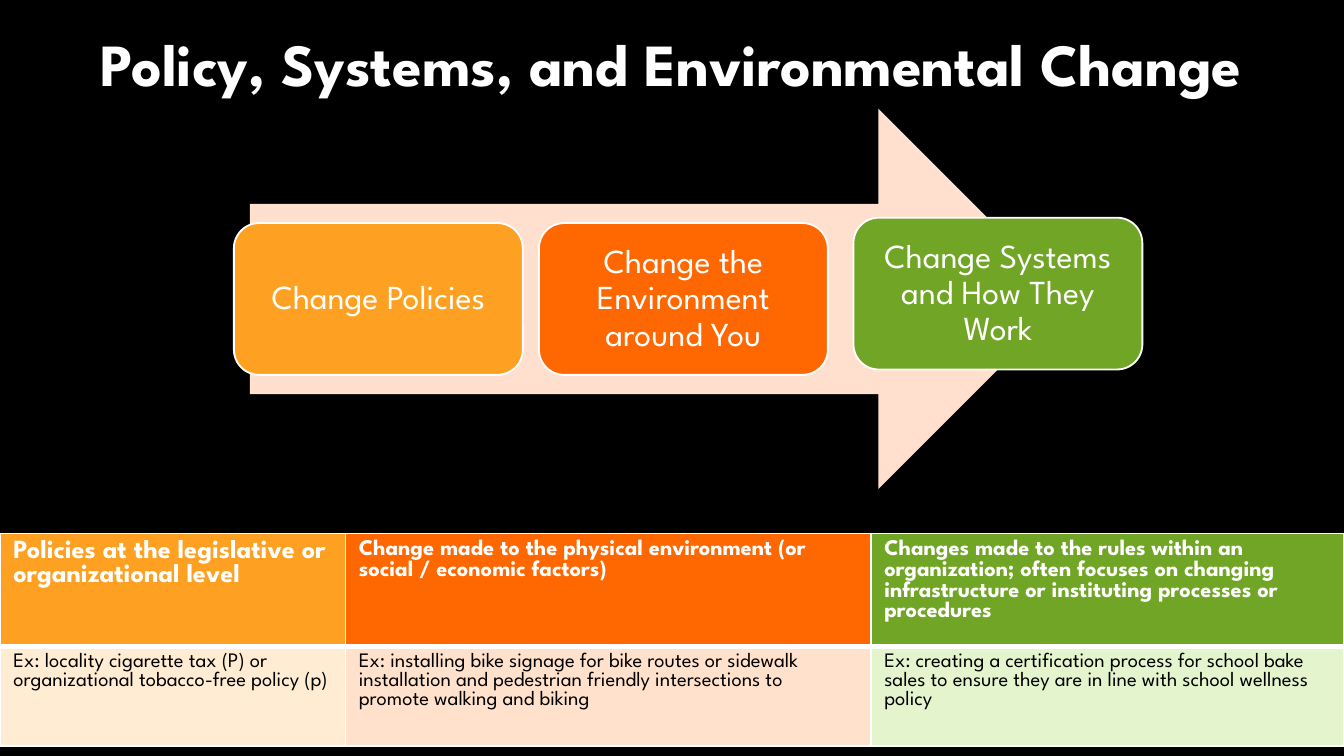
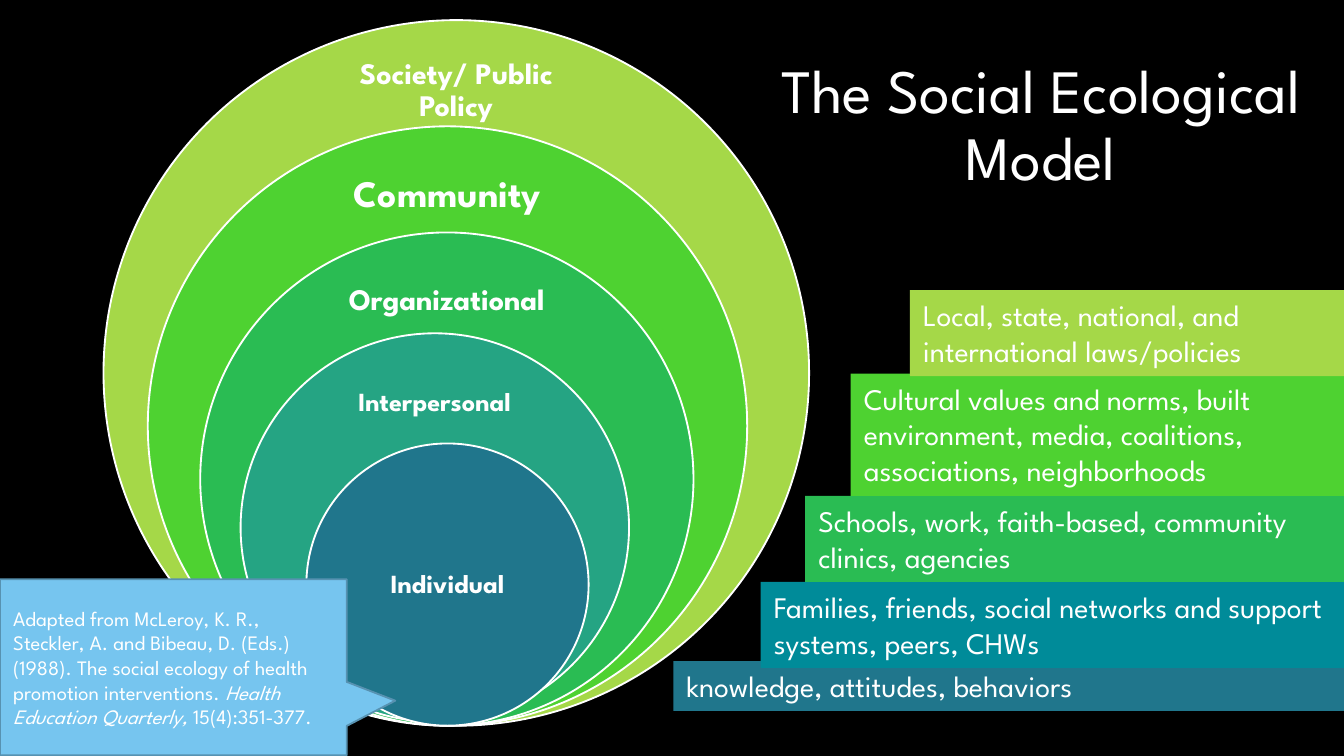
from lxml import etree
from pptx import Presentation
from pptx.dml.color import RGBColor
from pptx.enum import shapes, text
from pptx.oxml import ns
from pptx.util import Inches, Pt

FONT = "League Spartan"
WHITE, BLACK = "FFFFFF", "000000"
AMBER, ORANGE, LEAF = "FEA022", "FF6700", "70A525"
LIME, GREEN, EMERALD, TEAL, BLUE = "A5D848", "4ED231", "2ABC53", "25A483", "20768C"
SLIDE_WIDTH = 10
SLIDE_HEIGHT = SLIDE_WIDTH * 9 / 16

PSE_TITLE = "Policy, Systems, and Environmental Change"
ARROW_BOX = (1.86, 0.81, 6.09, 2.83)
STEP_SIZE = (2.15, 1.13)
STEPS = [  # left, top, colour, wording
    (1.74, 1.66, AMBER, "Change Policies"),
    (4.01, 1.66, ORANGE, "Change the Environment around You"),
    (6.35, 1.62, LEAF, "Change Systems and How They Work"),
]
TABLE_BOX = (0, 3.97, 10, 1.64)
ROW_HEIGHTS = [0.84, 0.74]
COLUMNS = [  # width, heading colour, heading size, heading, example colour, example
    (2.57, AMBER, 14, "Policies at the legislative or organizational level",
     "FFECD3", "Ex: locality cigarette tax (P) or organizational tobacco-free policy (p)"),
    (3.91, ORANGE, 12, "Change made to the physical environment (or social / economic factors)",
     "FFE1CC", "Ex: installing bike signage for bike routes or sidewalk installation and "
     "pedestrian friendly intersections to promote walking and biking"),
    (3.52, LEAF, 12, "Changes made to the rules within an organization; often focuses on "
     "changing infrastructure or instituting processes or procedures",
     "E4F4CD", "Ex: creating a certification process for school bake sales to ensure they "
     "are in line with school wellness policy"),
]

MODEL_TITLE = "The Social Ecological Model"
RINGS = [  # left, top, diameter, colour, label, size, inset, label offset, width, height
    (0.77, 0.15, 5.25, LIME, "Society/ Public Policy", 16, 0.12, 0.26, 1.97, 0.53),
    (1.1, 0.94, 4.46, GREEN, "Community", 20, 0.16, 0.26, 1.92, 0.51),
    (1.49, 1.73, 3.67, EMERALD, "Organizational", 16, 0.12, 0.25, 1.9, 0.51),
    (1.79, 2.48, 2.89, TEAL, "Interpersonal", 14, 0.11, 0.26, 1.56, 0.52),
    (2.28, 3.3, 2.1, BLUE, "Individual", 14, 0.11, 0.53, 1.48, 1.05),
]
BARS = [  # left, top, height, colour, wording
    (5.01, 4.92, 0.37, BLUE, "knowledge, attitudes, behaviors"),
    (5.66, 4.33, 0.64, "008B99",
     "Families, friends, social networks and support systems, peers, CHWs"),
    (5.99, 3.69, 0.64, EMERALD, "Schools, work, faith-based, community clinics, agencies"),
    (6.33, 2.78, 0.91, GREEN, "Cultural values and norms, built environment, media, "
     "coalitions, associations, neighborhoods"),
    (6.77, 2.16, 0.64, LIME, "Local, state, national, and international laws/policies"),
]
CITATION_BOX = (0, 4.31, 2.58, 1.31)
CITATION = [  # wording, italic
    ("Adapted from McLeroy, K. R., Steckler, A. and Bibeau, D. (Eds.) (1988). "
     "The social ecology of health promotion interventions. ", False),
    ("Health Education Quarterly,", True),
    (" 15(4):351-377.", False),
]


def color(value):
    return RGBColor.from_string(value)


def inches(box):
    return [Inches(length) for length in box]


def style(paragraph, size, bold=False, ink=WHITE, centered=False):
    paragraph.font.name = FONT
    paragraph.font.size = Pt(size)
    paragraph.font.bold = bold
    paragraph.font.color.rgb = color(ink)
    paragraph.alignment = text.PP_ALIGN.CENTER if centered else text.PP_ALIGN.LEFT
    if centered:
        paragraph.line_spacing = 0.9


def set_inset(frame, inset):
    frame.margin_left = frame.margin_right = Inches(inset)
    frame.margin_top = frame.margin_bottom = Inches(inset)


def write_centered(frame, wording, size, bold=False):
    frame.word_wrap = True
    frame.auto_size = text.MSO_AUTO_SIZE.NONE
    frame.vertical_anchor = text.MSO_ANCHOR.MIDDLE
    frame.text = wording
    style(frame.paragraphs[0], size, bold, centered=True)


def add_shape(slide, kind, box, fill, line=None):
    shape = slide.shapes.add_shape(kind, *inches(box))
    shape.shadow.inherit = False
    shape.fill.solid()
    shape.fill.fore_color.rgb = color(fill)
    if line:
        shape.line.color.rgb = color(line)
        shape.line.width = Pt(1)
    else:
        shape.line.fill.background()
    return shape


def add_slide(presentation, title, box, size, bold):
    slide = presentation.slides.add_slide(presentation.slide_layouts[5])
    shape = slide.shapes.title
    shape.left, shape.top, shape.width, shape.height = inches(box)
    write_centered(shape.text_frame, title, size, bold)
    return slide


def fill_cell(cell, wording, fill, bottom_width, **font):
    properties = cell._tc.get_or_add_tcPr()
    for side, width in (("L", 1), ("R", 1), ("T", 1), ("B", bottom_width)):
        line = etree.SubElement(properties, ns.qn(f"a:ln{side}"), w=str(Pt(width)))
        solid = etree.SubElement(line, ns.qn("a:solidFill"))
        etree.SubElement(solid, ns.qn("a:srgbClr"), val=WHITE)
    cell.fill.solid()
    cell.fill.fore_color.rgb = color(fill)
    cell.text = wording
    style(cell.text_frame.paragraphs[0], **font)


def add_change_table(slide):
    frame = slide.shapes.add_table(len(ROW_HEIGHTS), len(COLUMNS), *inches(TABLE_BOX))
    table = frame.table
    table.horz_banding = False
    for row, height in zip(table.rows, ROW_HEIGHTS):
        row.height = Inches(height)
    for index, (width, fill, size, heading, tint, example) in enumerate(COLUMNS):
        table.columns[index].width = Inches(width)
        fill_cell(table.cell(0, index), heading, fill, 3, size=size, bold=True)
        fill_cell(table.cell(1, index), example, tint, 1, size=11, ink=BLACK)
    frame.height = Inches(TABLE_BOX[3])


def build_change_slide(presentation):
    slide = add_slide(presentation, PSE_TITLE, (0, 0, SLIDE_WIDTH, 1), 32, True)
    add_shape(slide, shapes.MSO_SHAPE.RIGHT_ARROW, ARROW_BOX, "FFDFCD")
    for left, top, fill, wording in STEPS:
        step = add_shape(slide, shapes.MSO_SHAPE.ROUNDED_RECTANGLE,
                         (left, top, *STEP_SIZE), fill, WHITE)
        set_inset(step.text_frame, 0.07)
        write_centered(step.text_frame, wording, 18)
    add_change_table(slide)


def add_rings(slide):
    for left, top, diameter, fill, label, size, inset, offset, width, height in RINGS:
        add_shape(slide, shapes.MSO_SHAPE.OVAL, (left, top, diameter, diameter), fill, WHITE)
        label_left = left + (diameter - width) / 2
        box = slide.shapes.add_textbox(*inches((label_left, top + offset, width, height)))
        set_inset(box.text_frame, inset)
        write_centered(box.text_frame, label, size, bold=True)


def add_citation(slide):
    callout = add_shape(slide, shapes.MSO_SHAPE.RECTANGULAR_CALLOUT, CITATION_BOX,
                        "76C5EF", "5792B1")
    callout.adjustments[0], callout.adjustments[1] = 0.64, 0.19
    callout.text_frame.word_wrap = True
    callout.text_frame.vertical_anchor = text.MSO_ANCHOR.MIDDLE
    paragraph = callout.text_frame.paragraphs[0]
    style(paragraph, 11)
    for wording, italic in CITATION:
        run = paragraph.add_run()
        run.text = wording
        run.font.italic = italic


def add_bars(slide):
    for left, top, height, fill, wording in BARS:
        bar = add_shape(slide, shapes.MSO_SHAPE.RECTANGLE,
                        (left, top, SLIDE_WIDTH - left, height), fill)
        frame = bar.text_frame
        frame.word_wrap = True
        frame.auto_size = text.MSO_AUTO_SIZE.SHAPE_TO_FIT_TEXT
        frame.vertical_anchor = text.MSO_ANCHOR.TOP
        frame.text = wording
        style(frame.paragraphs[0], 16)


def build_model_slide(presentation):
    slide = add_slide(presentation, MODEL_TITLE, (5.66, 0.34, 4.17, 1.21), 33, False)
    add_rings(slide)
    add_citation(slide)
    add_bars(slide)


def main():
    presentation = Presentation()
    presentation.slide_width = Inches(SLIDE_WIDTH)
    presentation.slide_height = Inches(SLIDE_HEIGHT)
    background = presentation.slide_master.background.fill
    background.solid()
    background.fore_color.rgb = color(BLACK)
    build_change_slide(presentation)
    build_model_slide(presentation)
    presentation.save("out.pptx")


if __name__ == "__main__":
    main()
